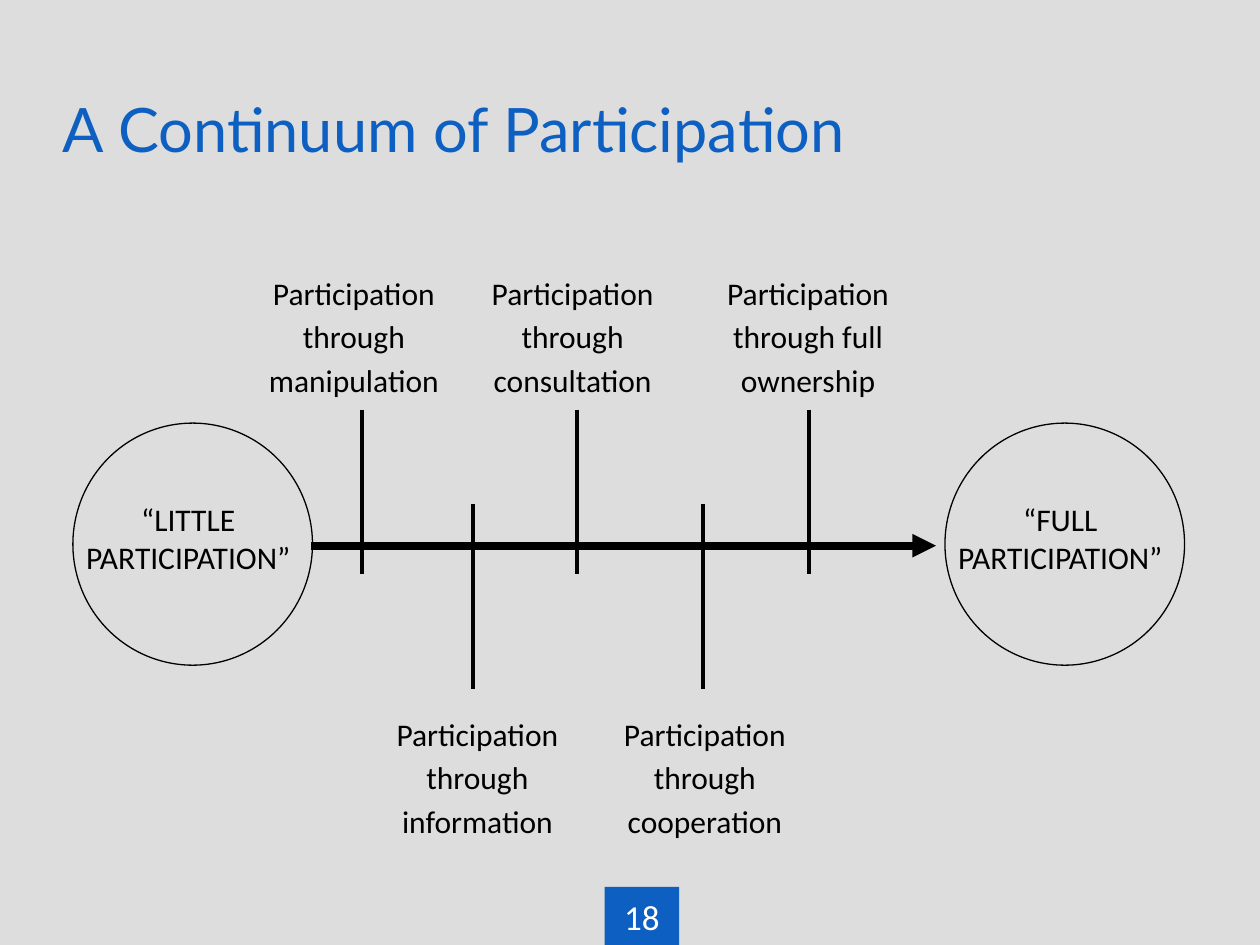
from lxml.etree import SubElement
from pptx import Presentation
from pptx.dml.color import RGBColor
from pptx.enum.shapes import MSO_CONNECTOR, MSO_SHAPE
from pptx.enum.text import MSO_ANCHOR, PP_ALIGN
from pptx.oxml.ns import qn
from pptx.util import Cm, Pt

BLACK = RGBColor(0x00, 0x00, 0x00)
BLUE = RGBColor(0x0D, 0x60, 0xC2)
WHITE = RGBColor(0xFF, 0xFF, 0xFF)
GREY = RGBColor(0xDD, 0xDD, 0xDD)

TITLE = "A Continuum of Participation"
NUMBER = "18"
ENDS = [
    (1.47, ["“LITTLE", "PARTICIPATION”"]),
    (19.05, ["“FULL", "PARTICIPATION”"]),
]
STEPS = [
    ("manipulation", 7.29, 5.08, 4.11),
    ("information", 9.53, 7.62, 4.01),
    ("consultation", 11.63, 9.32, 4.45),
    ("cooperation", 14.17, 11.86, 4.7),
    ("full ownership", 16.31, 14.17, 4.24),
]
ROWS = [
    {"top": 5.28, "high": 2.11, "line": (8.26, 11.58)},
    {"top": 14.17, "high": 1.63, "line": (10.16, 13.89)},
]
AXIS = 11.0
BODY = {"name": "Calibri", "size": Pt(18)}
HEAD = {"name": "Lato", "size": Pt(35)}
PAGE = {"name": "Calibri", "size": Pt(20)}


def apply(item, form):
    for key, value in form.items():
        setattr(item, key, value)


def write(shape, lines, font, color=BLACK, inset=None, frame=None, para=None):
    text = shape.text_frame
    apply(text, {"word_wrap": True, **(frame or {})})
    if inset is not None:
        for side in ("left", "top", "right", "bottom"):
            setattr(text, f"margin_{side}", Cm(inset))
    text.text = "\n".join(lines)
    for part in text.paragraphs:
        apply(part, {"alignment": PP_ALIGN.CENTER, **(para or {})})
        for run in part.runs:
            apply(run.font, font)
            run.font.color.rgb = color


def add_box(slide, place, *args, **form):
    write(slide.shapes.add_textbox(*map(Cm, place)), *args, **form)


def add_line(slide, start, end, width, arrow=False):
    line = slide.shapes.add_connector(
        MSO_CONNECTOR.STRAIGHT, *map(Cm, start + end))
    line.line.color.rgb = BLACK
    line.line.width = Pt(width)
    if arrow:
        SubElement(line.line._get_or_add_ln(), qn("a:tailEnd"), type="triangle")
    SubElement(line._element.spPr, qn("a:effectLst"))


def add_ring(slide, left):
    ring = slide.shapes.add_shape(
        MSO_SHAPE.OVAL, Cm(left), Cm(8.53), Cm(4.83), Cm(4.88))
    ring.shadow.inherit = False
    ring.fill.background()
    ring.line.color.rgb = BLACK
    ring.line.width = Pt(0.75)


def add_page(slide):
    tile = slide.shapes.add_shape(
        MSO_SHAPE.RECTANGLE, Cm(12.19), Cm(17.88), Cm(1.5), Cm(1.19))
    tile.shadow.inherit = False
    tile.fill.solid()
    tile.fill.fore_color.rgb = BLUE
    tile.line.fill.background()
    write(tile, [NUMBER], PAGE, WHITE,
          frame={"vertical_anchor": MSO_ANCHOR.MIDDLE})


def main():
    deck = Presentation()
    apply(deck, {"slide_width": Cm(25.4), "slide_height": Cm(19.05)})
    slide = deck.slides.add_slide(deck.slide_layouts[6])
    slide.background.fill.solid()
    slide.background.fill.fore_color.rgb = GREY

    add_box(slide, (1.27, 1.7, 22.86, 1.63), [TITLE], HEAD, BLUE, inset=0,
            frame={"vertical_anchor": MSO_ANCHOR.BOTTOM},
            para={"alignment": PP_ALIGN.LEFT})
    add_page(slide)
    add_line(slide, (6.27, AXIS), (18.87, AXIS), 4.5, arrow=True)

    for rank, (word, mark, left, wide) in enumerate(STEPS):
        row = ROWS[rank % 2]
        top, end = row["line"]
        add_box(slide, (left, row["top"], wide, row["high"]),
                [f"Participation through {word}"], BODY,
                para={"line_spacing": 1.15})
        add_line(slide, (mark, top), (mark, end), 2.25)

    for left, lines in ENDS:
        add_ring(slide, left)
        add_box(slide, (left, 9.96, 4.65, 2.57), lines, BODY, inset=0.13)

    deck.save("out.pptx")


if __name__ == "__main__":
    main()
